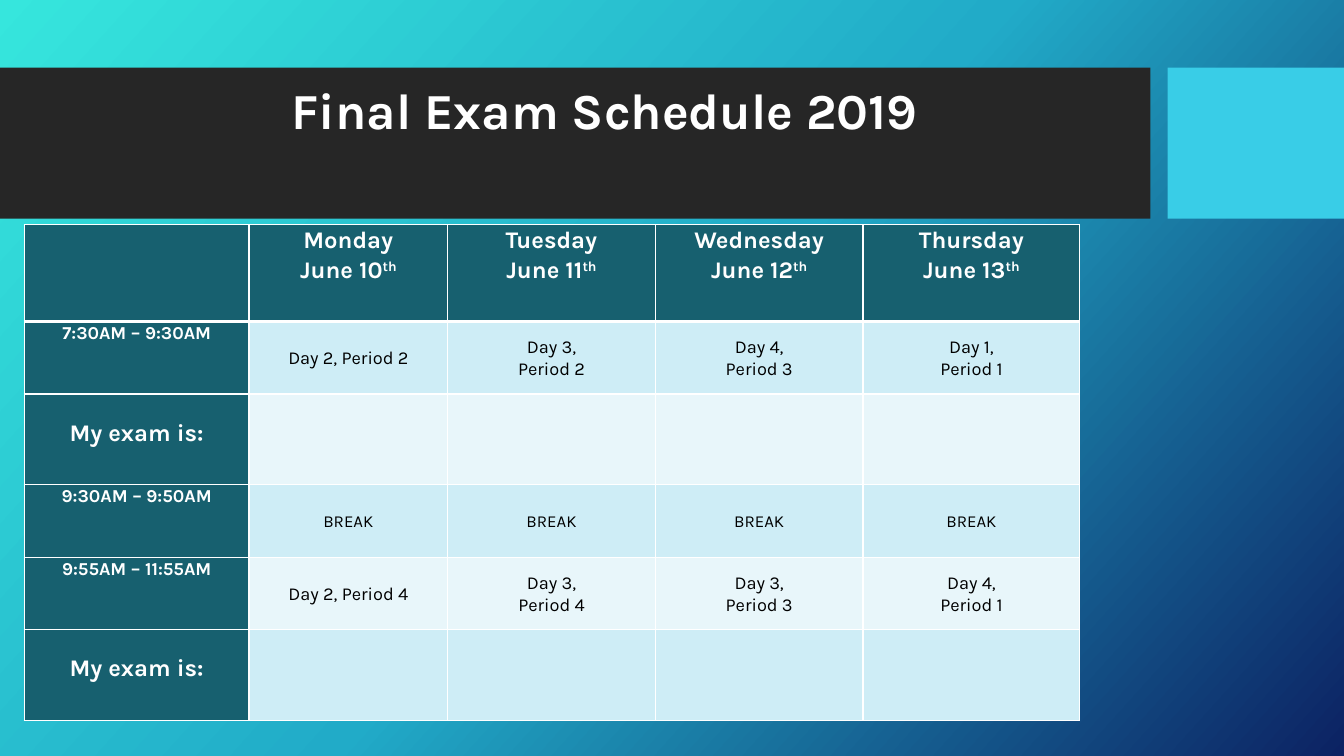
"""Build the final exam schedule slide."""
from copy import deepcopy
from typing import NamedTuple

from lxml import etree
from pptx import Presentation
from pptx.dml.color import RGBColor
from pptx.enum.shapes import MSO_SHAPE
from pptx.enum.text import MSO_ANCHOR, PP_ALIGN
from pptx.oxml.ns import qn
from pptx.util import Inches, Pt

RECTANGLE = MSO_SHAPE.RECTANGLE
TOP, MIDDLE = MSO_ANCHOR.TOP, MSO_ANCHOR.MIDDLE
CENTER = PP_ALIGN.CENTER
FONT = "Karla"
WHITE, BLACK, TEAL = "FFFFFF", "000000", "17606F"
ROW_TINTS = ("E8F6FA", "CEEDF6")
BACKGROUND = ((0, "36E6DD"), (0.5, "21ABC8"), (1, "0C2263"))
COLUMN_WIDTHS = (2.23, 1.97, 2.06, 2.06, 2.15)
EXAM_DAYS = (("Monday", "10"), ("Tuesday", "11"), ("Wednesday", "12"), ("Thursday", "13"))


class Band(NamedTuple):
    """A coloured block beside or behind the title."""
    left: float
    width: float
    color: str


class Style(NamedTuple):
    """Type settings of a cell."""
    size: int
    color: str
    bold: bool
    anchor: MSO_ANCHOR
    top: float = 0


class Period(NamedTuple):
    """A row of the timetable."""
    label: str
    height: float
    label_style: Style
    entries: tuple[str, ...] = ("",) * 4
    entry_size: int = 13


HEADING = Style(17, WHITE, True, TOP)
TIME = Style(13, WHITE, True, TOP)
REMINDER = Style(17, WHITE, True, TOP, 0.23)
BANDS = (Band(0, 11.41, "262626"), Band(11.58, 1.75, "39CDE7"))
MY_EXAM = Period("My exam is:", 0.9, REMINDER)
PERIODS = (
    Period("7:30AM – 9:30AM", 0.72, TIME,
           ("Day 2, Period 2", "Day 3,\nPeriod 2", "Day 4,\nPeriod 3", "Day 1,\nPeriod 1")),
    MY_EXAM,
    Period("9:30AM – 9:50AM", 0.72, TIME, ("BREAK",) * 4, 12),
    Period("9:55AM – 11:55AM", 0.72, TIME,
           ("Day 2, Period 4", "Day 3,\nPeriod 4", "Day 3,\nPeriod 3", "Day 4,\nPeriod 1")),
    MY_EXAM,
)
HEADER_HEIGHT = 0.96


def rgb(value: str) -> RGBColor:
    """Turn a hex string into a colour."""
    return RGBColor.from_string(value)


def add_span(para, text: str, style: Style, raised: bool = False) -> None:
    """Add one formatted run."""
    span = para.add_run()
    span.text = text
    span.font.name = FONT
    span.font.size = Pt(style.size)
    span.font.bold = style.bold
    span.font.color.rgb = rgb(style.color)
    if raised:
        span.font._element.set("baseline", "30000")


def paint_background(page) -> None:
    """Fill the page with the three-stop gradient."""
    fill = page.background.fill
    fill.gradient()
    fill.gradient_angle = 318
    stop_list = next(page.element.iter(qn("a:gsLst")))
    stop_list.insert(1, deepcopy(stop_list[0]))
    for stop, (position, color) in zip(fill.gradient_stops, BACKGROUND):
        stop.position = position
        stop.color.rgb = rgb(color)


def add_band(page, band: Band) -> None:
    """Draw one block of the title strip."""
    box = page.shapes.add_shape(RECTANGLE, Inches(band.left), Inches(0.67),
                                Inches(band.width), Inches(1.5))
    box.shadow.inherit = False
    box.fill.solid()
    box.fill.fore_color.rgb = rgb(band.color)
    box.line.fill.background()


def set_title(page, text: str) -> None:
    """Place the title in front of the strip."""
    title = page.shapes.title
    title.left, title.top = Inches(0.74), Inches(0.82)
    title.width, title.height = Inches(10.51), Inches(1.18)
    frame = title.text_frame
    frame.word_wrap = True
    frame.vertical_anchor = MIDDLE
    frame.margin_bottom = Inches(0.63)
    para = frame.paragraphs[0]
    para.alignment = CENTER
    para.line_spacing = 0.9
    add_span(para, text, Style(36, WHITE, True, MIDDLE))
    page.shapes.element.append(title.element)


def set_borders(cell, top: float, bottom: float) -> None:
    """Draw white lines on all four sides of a cell."""
    properties = cell._tc.get_or_add_tcPr()
    sides = (("L", 1), ("R", 1), ("T", top), ("B", bottom))
    for index, (side, width) in enumerate(sides):
        line = etree.Element(qn(f"a:ln{side}"), w=str(Pt(width)))
        solid = etree.SubElement(line, qn("a:solidFill"))
        etree.SubElement(solid, qn("a:srgbClr"), val=WHITE)
        properties.insert(index, line)


def fill_cell(cell, text: str, style: Style, color: str, ordinal: str = "") -> None:
    """Colour a cell and write its lines, with an optional raised ending."""
    cell.fill.solid()
    cell.fill.fore_color.rgb = rgb(color)
    if not text:
        return
    cell.margin_left = cell.margin_right = Inches(0.07)
    cell.margin_top, cell.margin_bottom = Inches(style.top), 0
    cell.vertical_anchor = style.anchor
    frame = cell.text_frame
    for index, line in enumerate(text.split("\n")):
        para = frame.add_paragraph() if index else frame.paragraphs[0]
        para.alignment = CENTER
        para.line_spacing = 1.07
        add_span(para, line, style)
    if ordinal:
        add_span(para, ordinal, style, raised=True)


def add_timetable(page) -> None:
    """Build the exam table."""
    heights = (HEADER_HEIGHT, *(period.height for period in PERIODS))
    table = page.shapes.add_table(
        len(heights), len(COLUMN_WIDTHS), Inches(0.24), Inches(2.23),
        Inches(sum(COLUMN_WIDTHS)), Inches(sum(heights))).table
    for column, width in zip(table.columns, COLUMN_WIDTHS):
        column.width = Inches(width)
    for row, height in zip(table.rows, heights):
        row.height = Inches(height)
    fill_cell(table.cell(0, 0), "", HEADING, TEAL)
    for column, (day, date) in enumerate(EXAM_DAYS, 1):
        fill_cell(table.cell(0, column), f"{day}\nJune {date}", HEADING, TEAL, "th")
    for row, period in enumerate(PERIODS, 1):
        fill_cell(table.cell(row, 0), period.label, period.label_style, TEAL)
        entry_style = Style(period.entry_size, BLACK, False, MIDDLE)
        for column, entry in enumerate(period.entries, 1):
            fill_cell(table.cell(row, column), entry, entry_style, ROW_TINTS[row % 2])
    for row in range(len(heights)):
        for column in range(len(COLUMN_WIDTHS)):
            set_borders(table.cell(row, column), 3 if row == 1 else 1, 3 if row == 0 else 1)


def main() -> None:
    """Create and save the deck."""
    deck = Presentation()
    deck.slide_width, deck.slide_height = Inches(13.33), Inches(7.5)
    page = deck.slides.add_slide(deck.slide_layouts[5])
    paint_background(page)
    for band in BANDS:
        add_band(page, band)
    set_title(page, "Final Exam Schedule 2019")
    add_timetable(page)
    deck.save("out.pptx")


if __name__ == "__main__":
    main()
